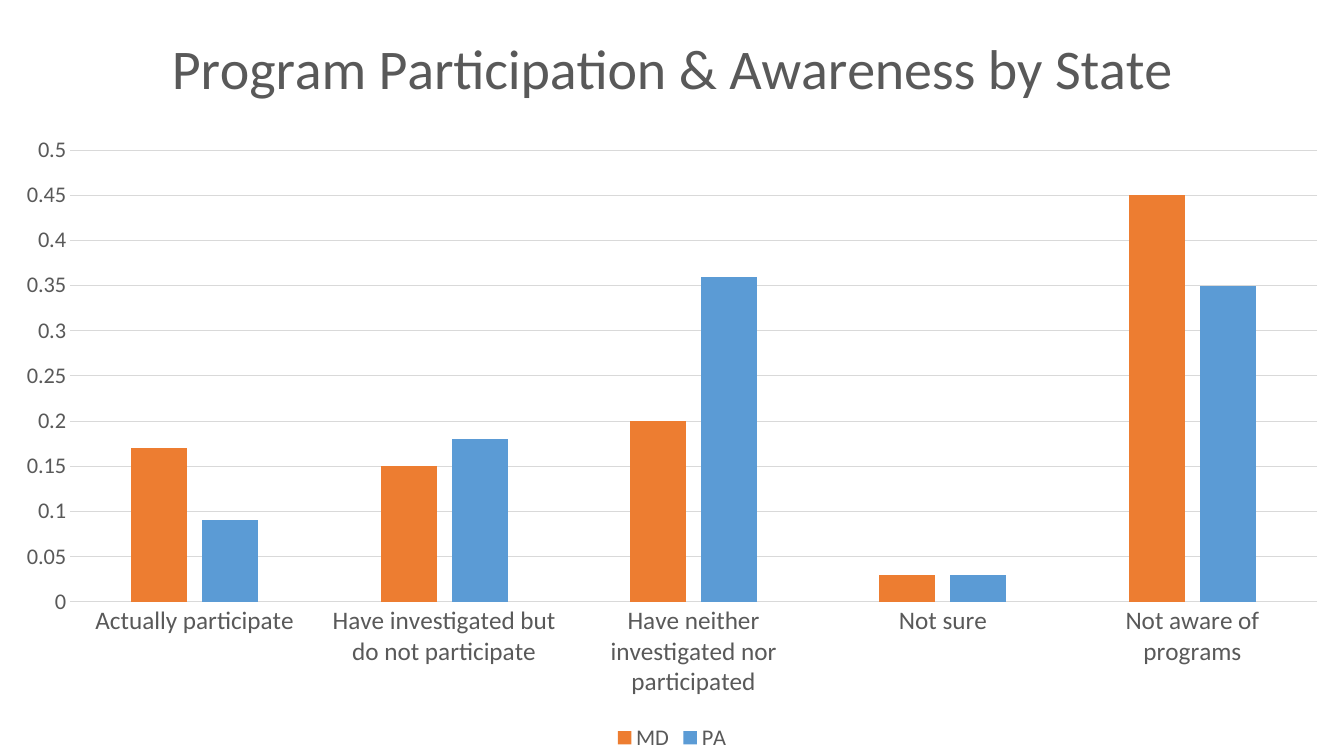
from pptx import Presentation
from pptx import util as u
from pptx.chart.data import CategoryChartData
from pptx.dml.color import RGBColor
from pptx.enum import chart as ch

GREY, RULE = "595959", "D9D9D9"


def rgb(color, value):
    color.rgb = RGBColor.from_string(value)


def style(font, size):
    font.name, font.size, font.bold = "Calibri", u.Pt(size), False
    rgb(font.color, GREY)


prs = Presentation()
prs.slide_width, prs.slide_height = u.Cm(33.87), u.Cm(19.05)
s = prs.slides.add_slide(prs.slide_layouts[6])

# Survey shares by state
data = CategoryChartData(number_format="General")
data.categories = [
    "Actually participate",
    "Have investigated but do not participate",
    "Have neither investigated nor participated",
    "Not sure",
    "Not aware of programs",
]
states = [
    ("MD", [0.17, 0.15, 0.2, 0.03, 0.45], "ED7D31"),
    ("PA", [0.09, 0.18, 0.36, 0.03, 0.35], "5B9BD5"),
]
for name, shares, _ in states:
    data.add_series(name, shares)

# Chart across the whole slide
chart = s.shapes.add_chart(ch.XL_CHART_TYPE.COLUMN_CLUSTERED, 0, 0,
                           prs.slide_width, prs.slide_height, data).chart
style(chart.font, 16)

# Title
tf = chart.chart_title.text_frame
tf.text = "Program Participation & Awareness by State"
style(tf.paragraphs[0].font, 40)
chart.chart_title.include_in_layout = False

# Columns
plot = chart.plots[0]
plot.gap_width, plot.overlap, plot.vary_by_categories = 219, -27, False
for series, (_, _, color) in zip(plot.series, states):
    series.format.fill.solid()
    rgb(series.format.fill.fore_color, color)
    series.invert_if_negative = False

# Axes and gridlines
cat, val = chart.category_axis, chart.value_axis
for axis, size in ((cat, 18), (val, 16)):
    style(axis.tick_labels.font, size)
    axis.major_tick_mark = axis.minor_tick_mark = ch.XL_TICK_MARK.NONE
val.minimum_scale, val.maximum_scale, val.major_unit = 0, 0.5, 0.05
val.has_major_gridlines = True
val.format.line.fill.background()
for line in (cat.format.line, val.major_gridlines.format.line):
    rgb(line.color, RULE)
    line.width = u.Pt(0.75)

# Legend
chart.has_legend = True
chart.legend.position = ch.XL_LEGEND_POSITION.BOTTOM
chart.legend.include_in_layout = False
style(chart.legend.font, 16)

prs.save("out.pptx")
